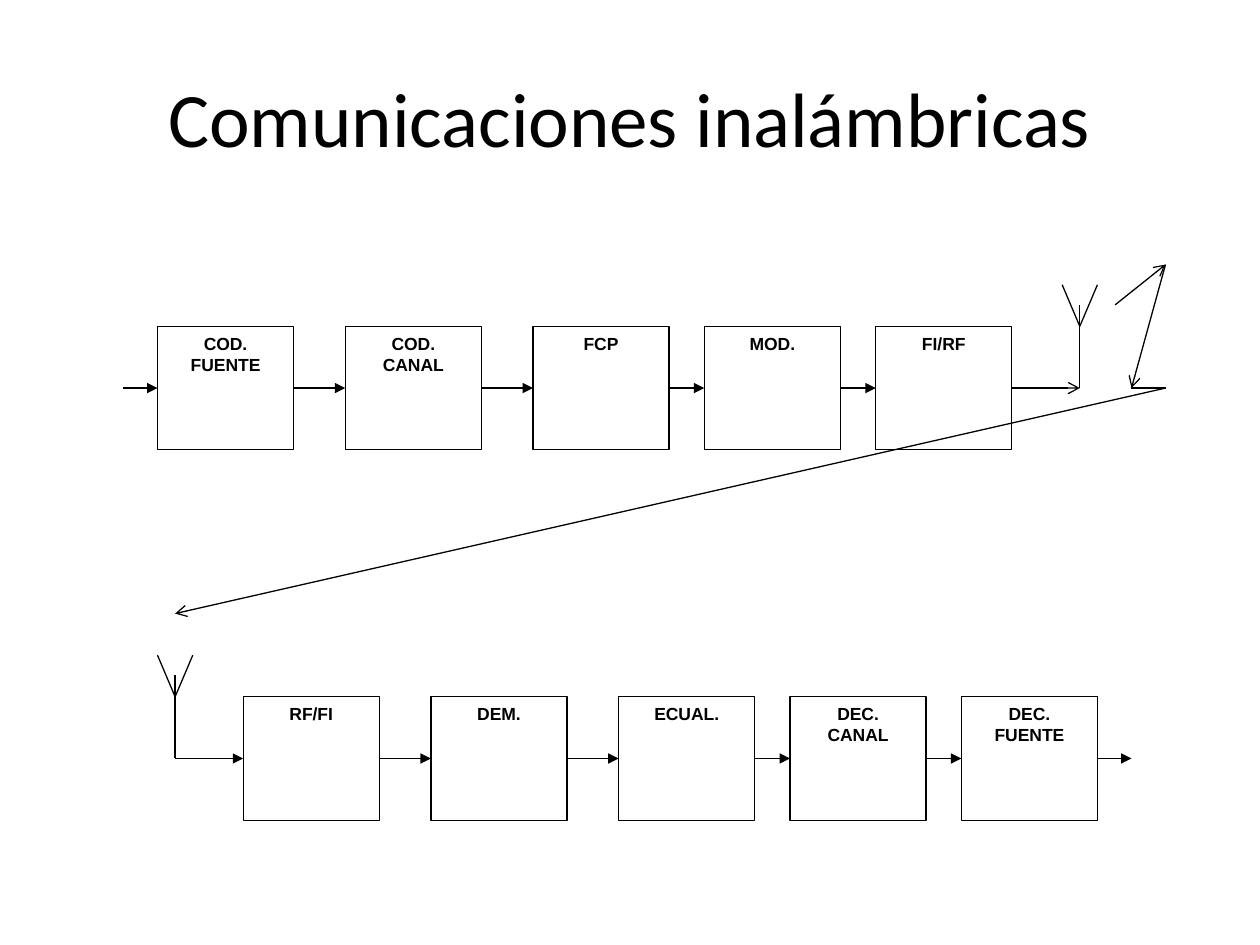
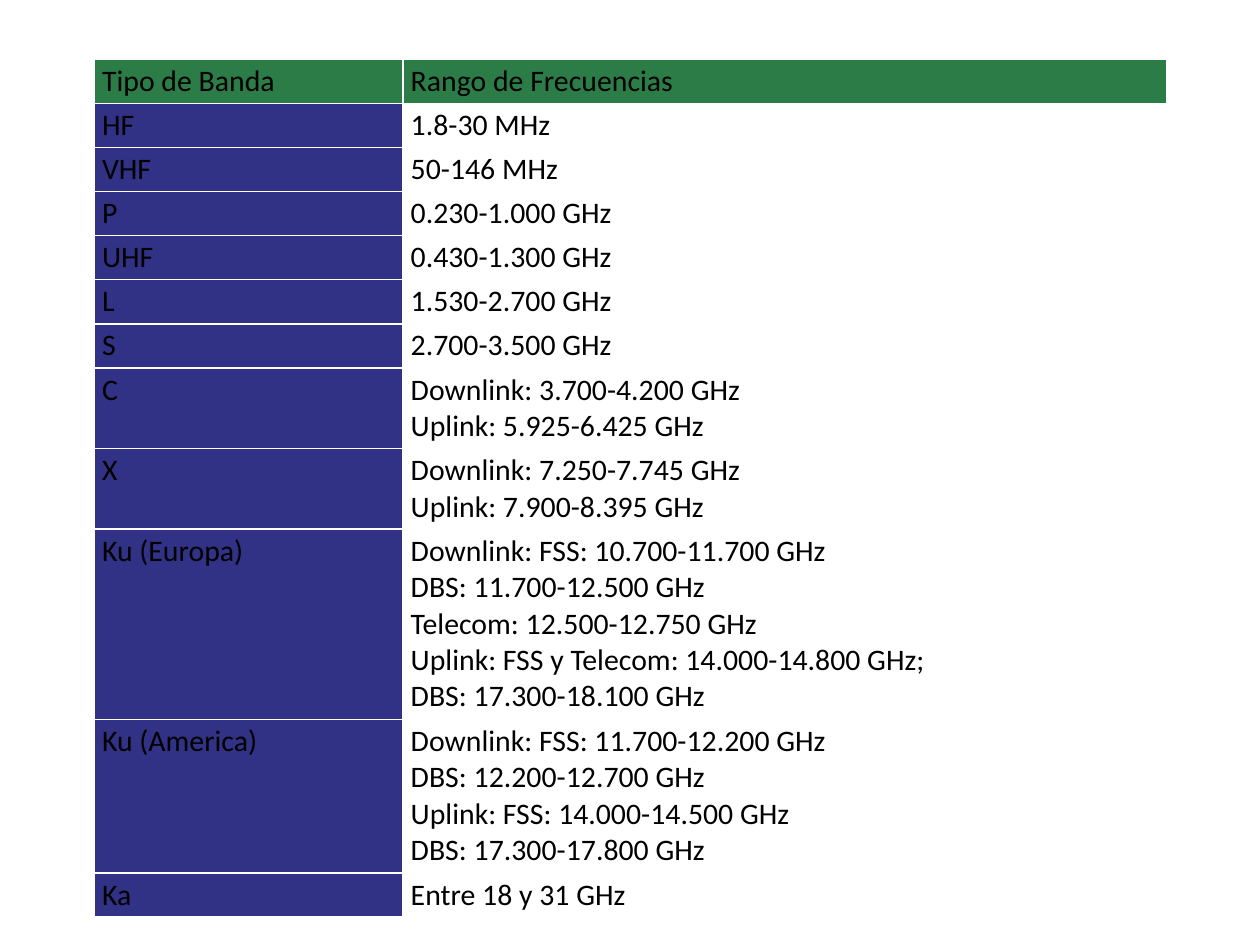
from dataclasses import dataclass
from lxml.etree import SubElement as Sub
from pptx import Presentation
from pptx.dml.color import RGBColor as Rgb
from pptx.enum.shapes import MSO_CONNECTOR as Conn, MSO_SHAPE as Shape
from pptx.enum.text import MSO_ANCHOR as Anchor, PP_ALIGN as Align
from pptx.oxml.ns import qn
from pptx.util import Inches, Pt


@dataclass(frozen=True)
class Theme:
    """Colours, fonts and sizes shared by the slides."""
    ink: Rgb = Rgb(0, 0, 0)
    paper: Rgb = Rgb(255, 255, 255)
    head: Rgb = Rgb(0x2C, 0x7C, 0x48)
    side: Rgb = Rgb(0x31, 0x31, 0x85)
    main: str = "Calibri"
    label: str = "Arial"
    title: float = 44
    cell: float = 17
    block: float = 10
    line: float = 0.75


THEME = Theme()
WIDE, HIGH = 1.08, 0.98
GAPS = (0.41, 0.41, 0.28, 0.28)
SEND = (("COD.", "FUENTE"), ("COD.", "CANAL"), ("FCP",), ("MOD.",), ("FI/RF",))
TAKE = (("RF/FI",), ("DEM.",), ("ECUAL.",), ("DEC.", "CANAL"), ("DEC.", "FUENTE"))
BANDS = (
    ("Tipo de Banda", ("Rango de Frecuencias",)),
    ("HF", ("1.8-30 MHz",)),
    ("VHF", ("50-146 MHz",)),
    ("P", ("0.230-1.000 GHz",)),
    ("UHF", ("0.430-1.300 GHz",)),
    ("L", ("1.530-2.700 GHz",)),
    ("S", ("2.700-3.500 GHz",)),
    ("C", ("Downlink: 3.700-4.200 GHz", "Uplink: 5.925-6.425 GHz")),
    ("X", ("Downlink: 7.250-7.745 GHz", "Uplink: 7.900-8.395 GHz")),
    ("Ku (Europa)", ("Downlink: FSS: 10.700-11.700 GHz", "DBS: 11.700-12.500 GHz",
                     "Telecom: 12.500-12.750 GHz",
                     "Uplink: FSS y Telecom: 14.000-14.800 GHz;",
                     "DBS: 17.300-18.100 GHz")),
    ("Ku (America)", ("Downlink: FSS: 11.700-12.200 GHz", "DBS: 12.200-12.700 GHz",
                      "Uplink: FSS: 14.000-14.500 GHz", "DBS: 17.300-17.800 GHz")),
    ("Ka", ("Entre 18 y 31 GHz",)),
)


def write(para, text, size, face, bold=False):
    """Add one styled run to a paragraph."""
    run = para.add_run()
    run.text = text
    font = run.font
    font.size, font.name, font.bold = Pt(size), face, bold
    font.color.rgb = THEME.ink


def wire(slide, start, end, tip=None, left=None, right=None):
    """Draw a line, with an optional tip and joined blocks."""
    line = slide.shapes.add_connector(Conn.STRAIGHT, *map(Inches, start + end))
    if left is not None:
        line.begin_connect(left, 3)
    if right is not None:
        line.end_connect(right, 1)
    line.line.color.rgb = THEME.ink
    line.line.width = Pt(THEME.line)
    props = line._element.spPr
    if tip:
        Sub(props.find(qn("a:ln")), qn("a:tailEnd"), type=tip)
    Sub(props, qn("a:effectLst"))


def title(slide, text, x, y, wide, high):
    """Place a centred slide title."""
    frame = slide.shapes.add_textbox(*map(Inches, (x, y, wide, high))).text_frame
    frame.word_wrap = True
    frame.vertical_anchor = Anchor.MIDDLE
    para = frame.paragraphs[0]
    para.alignment = Align.CENTER
    write(para, text, THEME.title, THEME.main)


def block(slide, words, x, y):
    """Place one stage of the chain, with a line for each word."""
    box = slide.shapes.add_shape(Shape.RECTANGLE, *map(Inches, (x, y, WIDE, HIGH)))
    box.shadow.inherit = False
    box.fill.solid()
    box.fill.fore_color.rgb = THEME.paper
    box.line.color.rgb = THEME.ink
    box.line.width = Pt(THEME.line)
    frame = box.text_frame
    frame.word_wrap = True
    frame.vertical_anchor = Anchor.TOP
    for i, word in enumerate(words):
        para = frame.add_paragraph() if i else frame.paragraphs[0]
        para.alignment = Align.CENTER
        write(para, word, THEME.block, THEME.label, True)
    return box


def chain(slide, stages, x, y, lead, trail, tip="triangle"):
    """Place a row of joined stages with a lead wire and a trailing wire."""
    mid = y + HIGH / 2
    start, last = x - lead, None
    for words, gap in zip(stages, GAPS + (trail,)):
        box = block(slide, words, x, y)
        wire(slide, (start, mid), (x, mid), "triangle", last, box)
        start, last = x + WIDE, box
        x = start + gap
    wire(slide, (start, mid), (x, mid), tip, last)


def aerial(slide, x, y):
    """Draw an antenna whose arms meet at the given point."""
    wire(slide, (x, y + HIGH / 2), (x, y - 0.17))
    for side in (-0.14, 0.14):
        wire(slide, (x, y), (x + side, y - 0.33))


def radio(slide):
    """Build the slide of the sending and receiving chains."""
    title(slide, "Comunicaciones inalámbricas", 0.5, 0.3, 9, 1.25)
    top, low, far, near = 2.59, 5.53, 8.57, 1.39
    chain(slide, SEND, 1.25, top, 0.27, 0.54, "arrow")
    aerial(slide, far, top)
    chain(slide, TAKE, 1.93, low, 0.54, 0.27)
    aerial(slide, near, low)
    hops = ((8.85, 2.42), (9.25, 2.1), (8.98, 3.08), (9.25, 3.08), (near, 4.87))
    tips = ("arrow", "arrow", None, "arrow")
    for start, end, tip in zip(hops, hops[1:], tips):
        wire(slide, start, end, tip)


def fill(cell, lines, tint):
    """Fill one table cell with lines of text on a tint."""
    cell.fill.solid()
    cell.fill.fore_color.rgb = tint
    cell.margin_left = cell.margin_right = Inches(0.06)
    cell.margin_top = cell.margin_bottom = Inches(0.03)
    para = cell.text_frame.paragraphs[0]
    for i, line in enumerate(lines):
        if i:
            para.add_line_break()
        write(para, line, THEME.cell, THEME.main)


def bands(slide, x, y, cols):
    """Build the table of frequency bands."""
    highs = [0.06 + 0.29 * len(lines) for _, lines in BANDS]
    area = map(Inches, (x, y, sum(cols), sum(highs)))
    grid = slide.shapes.add_table(len(BANDS), len(cols), *area).table
    for col, wide in zip(grid.columns, cols):
        col.width = Inches(wide)
    for i, (name, lines) in enumerate(BANDS):
        grid.rows[i].height = Inches(highs[i])
        tints = (THEME.side, THEME.paper) if i else (THEME.head, THEME.head)
        for j, text in enumerate(((name,), lines)):
            fill(grid.cell(i, j), text, tints[j])


def main():
    """Build and save the deck."""
    deck = Presentation()
    deck.slide_width, deck.slide_height = Inches(10), Inches(7.5)
    blank = deck.slide_layouts[6]
    radio(deck.slides.add_slide(blank))
    bands(deck.slides.add_slide(blank), 0.75, 0.47, (2.45, 6.06))
    deck.save("out.pptx")


if __name__ == "__main__":
    main()
